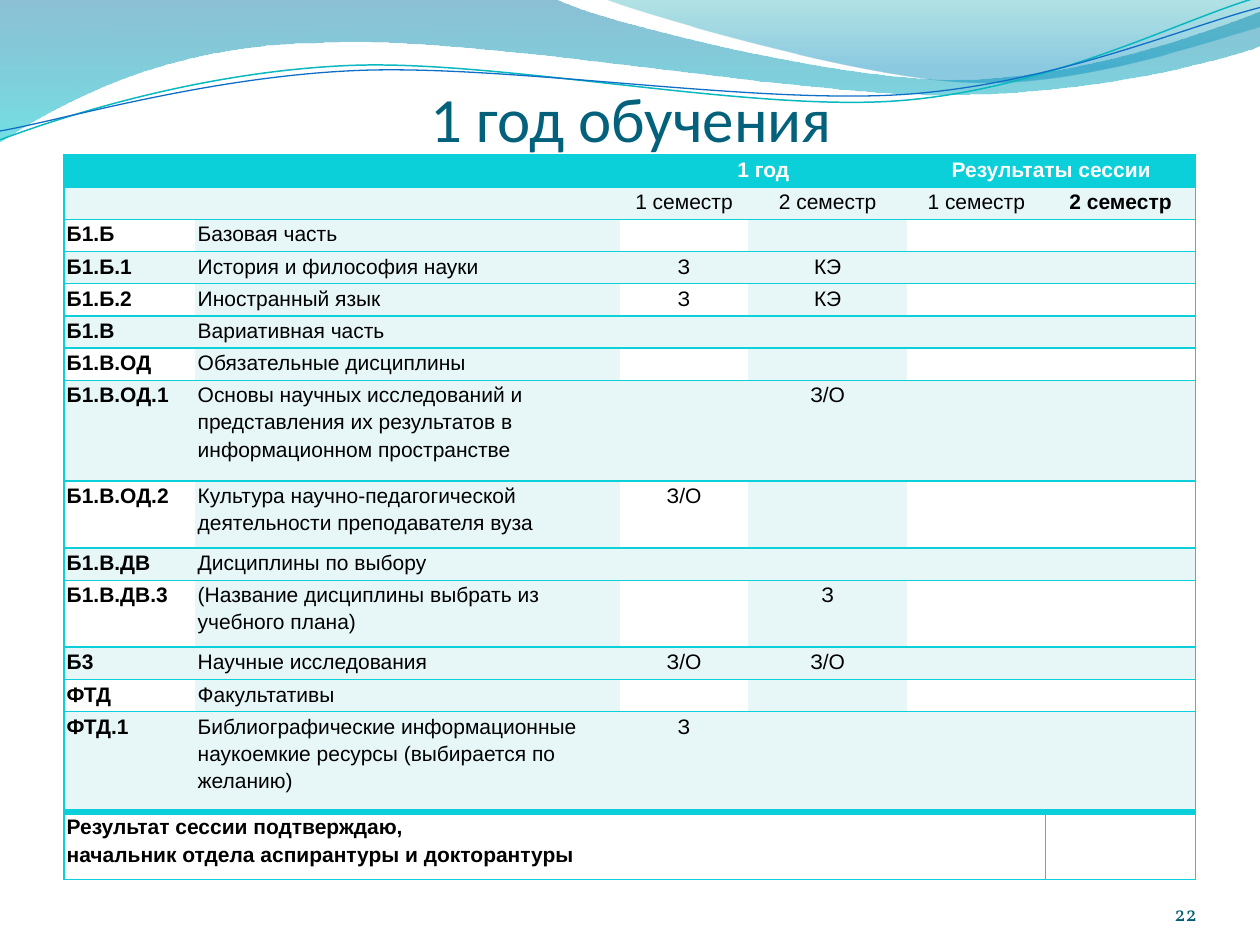
from math import cos, radians, sin

from lxml.etree import SubElement
from pptx import Presentation
from pptx.dml.color import RGBColor
from pptx.enum.text import MSO_ANCHOR, MSO_AUTO_SIZE, PP_ALIGN
from pptx.oxml.ns import qn
from pptx.util import Inches, Pt

COLORS = {
    "title": "04617B", "number": "045D75", "accent": "0BD0D9", "band": "E7F7F8",
    "white": "FFFFFF", "black": "000000", "wave_top": "0074A1", "wave_bottom": "00C6CF",
    "crest_top": "00A1A9", "crest_bottom": "008BBF", "teal_line": "0AB8BF", "blue_line": "0F6FC6",
}
NO_STYLE = "{2D5ABB26-0587-4C30-8999-92F81FD0307C}"
COLUMN_WIDTHS = [1.04, 3.37, 1.02, 1.26, 1.1, 1.19]
ROW_UNITS = [1] * 7 + [3.13, 2.08, 1, 2.08, 1, 1, 3.13, 2.08]
LINE_TILT = 2.7  # degrees, counterclockwise

# Each row: code, subject, then marks for the two semesters
SUBJECTS = [
    ("Б1.Б", "Базовая часть", "", ""),
    ("Б1.Б.1", "История и философия науки", "З", "КЭ"),
    ("Б1.Б.2", "Иностранный язык", "З", "КЭ"),
    ("Б1.В", "Вариативная часть", "", ""),
    ("Б1.В.ОД", "Обязательные дисциплины", "", ""),
    ("Б1.В.ОД.1", "Основы научных исследований и представления их результатов "
                  "в информационном пространстве", "", "З/О"),
    ("Б1.В.ОД.2", "Культура научно-педагогической деятельности преподавателя вуза", "З/О", ""),
    ("Б1.В.ДВ", "Дисциплины по выбору", "", ""),
    ("Б1.В.ДВ.3", "(Название дисциплины выбрать из учебного плана)", "", "З"),
    ("Б3", "Научные исследования", "З/О", "З/О"),
    ("ФТД", "Факультативы", "", ""),
    ("ФТД.1", "Библиографические информационные наукоемкие ресурсы "
              "(выбирается по желанию)", "З", ""),
]
TABLE_ROWS = [
    ("", "", "1 год", "", "Результаты сессии", ""),
    ("", "", "1 семестр", "2 семестр", "1 семестр", "2 семестр"),
    *[subject + ("", "") for subject in SUBJECTS],
    ("Результат сессии подтверждаю,\nначальник отдела аспирантуры и докторантуры",) + ("",) * 5,
]

# Outlines: each part is one point for a corner, three for a Bezier curve
WAVE = [
    [(0, -0.01)], [(4.4, -0.01)],
    [(4.76, 0.17), (6.64, 0.63), (7.58, 0.63)], [(8.53, 0.63), (9.58, 0.26), (10, 0.09)],
    [(10.01, 0.36)],
    [(9.83, 0.44), (8.7, 0.76), (7.46, 0.75)], [(6.22, 0.75), (3.82, 0.28), (2.57, 0.34)],
    [(1.29, 0.35), (0.46, 0.83), (-0.01, 1.13)],
]
CREST = [
    [(4.79, -0.01)], [(5.09, 0.11), (6.82, 0.62), (7.69, 0.65)],
    [(8.56, 0.69), (9.61, 0.32), (10, 0.21)], [(10, 0)],
]
TEAL_LINE = [
    [(0, 1.11)], [(0.48, 0.93), (1.58, 0.57), (2.77, 0.52)],
    [(3.95, 0.47), (5.93, 0.89), (7.13, 0.8)], [(8.33, 0.71), (9.38, 0.15), (9.98, -0.02)],
]
BLUE_LINE = [
    [(0, 1.04)], [(0.47, 0.96), (1.64, 0.61), (2.83, 0.56)],
    [(4.03, 0.51), (5.97, 0.83), (7.17, 0.75)], [(8.36, 0.67), (9.41, 0.21), (10, 0.06)],
]


def color(name):
    return RGBColor.from_string(COLORS[name])


def apply_format(target, values):
    for name, value in values.items():
        setattr(target, name, value)


def place(shape, box):
    apply_format(shape, dict(zip(("left", "top", "width", "height"), map(Inches, box))))


def write(paragraph, text, font_color, **values):
    run = paragraph.add_run()
    run.text = text
    apply_format(run.font, values)
    run.font.color.rgb = color(font_color)


def turn(outline, angle, center):
    """Turn an outline clockwise about a center."""
    c, s = cos(radians(angle)), sin(radians(angle))
    return [[(center[0] + (x - center[0]) * c - (y - center[1]) * s,
              center[1] + (x - center[0]) * s + (y - center[1]) * c) for x, y in part]
            for part in outline]


def add_outline(slide, outline, close):
    """Build a freeform through the end points, then bend its segments."""
    outline = [[(Inches(x), Inches(y)) for x, y in part] for part in outline]
    corners = [part[-1] for part in outline]
    builder = slide.shapes.build_freeform(*corners[0], scale=1.0)
    builder.add_line_segments(corners[1:], close=close)
    shape = builder.convert_to_shape()
    shape.shadow.inherit = False
    segments = list(shape.element.iter(qn("a:lnTo")))
    for segment, part in zip(segments, outline[1:]):
        if len(part) == 3:
            curve = SubElement(segment.getparent(), qn("a:cubicBezTo"))
            for x, y in part:
                SubElement(curve, qn("a:pt"), x=str(x - shape.left), y=str(y - shape.top))
            segment.getparent().replace(segment, curve)
    return shape


def add_gradient_wave(slide, outline, stops):
    shape = add_outline(slide, outline, True)
    shape.line.fill.background()
    shape.fill.gradient()
    shape.fill.gradient_angle = 270
    for stop, (position, name, _) in zip(shape.fill.gradient_stops, stops):
        stop.position = position
        stop.color.rgb = color(name)
    gradient = shape.element.spPr.find(qn("a:gradFill"))
    for element, (_, _, opacity) in zip(gradient.iter(qn("a:srgbClr")), stops):
        SubElement(element, qn("a:alpha"), val=str(opacity * 1000))


def add_header_waves(slide):
    add_gradient_wave(slide, WAVE, [(0, "wave_top", 45), (1, "wave_bottom", 55)])
    add_gradient_wave(slide, CREST, [(0, "crest_top", 30), (0.8, "crest_bottom", 45)])
    for outline, name, width, center in ((TEAL_LINE, "teal_line", 0.85, (4.99, 0.58)),
                                         (BLUE_LINE, "blue_line", 0.75, (5, 0.59))):
        shape = add_outline(slide, turn(outline, LINE_TILT, center), False)
        shape.rotation = 360 - LINE_TILT
        shape.fill.background()
        shape.line.color.rgb = color(name)
        shape.line.width = Pt(width)


def add_title(slide, box):
    title = slide.shapes.title
    place(title, box)
    apply_format(title.text_frame, {
        "vertical_anchor": MSO_ANCHOR.BOTTOM, "auto_size": MSO_AUTO_SIZE.NONE, "word_wrap": True,
        "margin_left": 0, "margin_right": 0, "margin_top": Inches(0.05), "margin_bottom": 0})
    paragraph = title.text_frame.paragraphs[0]
    paragraph.alignment = PP_ALIGN.CENTER
    write(paragraph, "1 год обучения", "title", name="Calibri", size=Pt(36))
    title.element.getparent().append(title.element)  # in front of the waves


def add_borders(cell, widths):
    properties = cell._tc.get_or_add_tcPr()
    for side in "LRTB":
        width = widths.get(side, 0)
        line = SubElement(properties, qn("a:ln" + side), w=str(Pt(width)))
        if width:
            fill = SubElement(line, qn("a:solidFill"))
            SubElement(fill, qn("a:srgbClr"), val=COLORS["accent"])
        else:
            SubElement(line, qn("a:noFill"))


def fill_name(row, column):
    if row == 0:
        return "accent"
    if row == len(TABLE_ROWS) - 1:
        return "white"
    return "band" if row % 2 or column in (1, 3) else "white"


def format_cell(cell, row, column, text):
    last_row, last_column = len(TABLE_ROWS) - 1, len(COLUMN_WIDTHS) - 1
    widths = {"T": 4 if row == last_row else 1, "B": 4 if row == last_row - 1 else 1}
    if column == 0 or (row, column) == (last_row, last_column):
        widths["L"] = 1
    if column == last_column:
        widths["R"] = 1
    add_borders(cell, widths)
    cell.fill.solid()
    cell.fill.fore_color.rgb = color(fill_name(row, column))
    side = Inches(0.02 if column < 2 else 0.07)
    apply_format(cell, {"margin_left": side, "margin_right": side,
                        "margin_top": 0, "margin_bottom": 0})
    bold = row == 0 or column == 0 or (row, column) == (1, last_column)
    for index, line in enumerate(text.split("\n")):
        frame = cell.text_frame
        paragraph = frame.add_paragraph() if index else frame.paragraphs[0]
        if line:
            paragraph.line_spacing = 1.15
            paragraph.alignment = PP_ALIGN.LEFT if column < 2 else PP_ALIGN.CENTER
            write(paragraph, line, "black" if row else "white",
                  name="Arial", size=Pt(12), bold=bold)
        else:
            SubElement(paragraph._p, qn("a:endParaRPr"), sz="1200")


def add_study_table(slide, box):
    table = slide.shapes.add_table(len(TABLE_ROWS), len(COLUMN_WIDTHS), *map(Inches, box)).table
    apply_format(table, {"first_row": False, "horz_banding": False})
    table._tbl.tblPr.find(qn("a:tableStyleId")).text = NO_STYLE
    for column, width in zip(table.columns, COLUMN_WIDTHS):
        column.width = Inches(box[2] * width / sum(COLUMN_WIDTHS))
    for row, units in zip(table.rows, ROW_UNITS):
        row.height = Inches(box[3] * units / sum(ROW_UNITS))
    for row, texts in enumerate(TABLE_ROWS):
        for column, text in enumerate(texts):
            format_cell(table.cell(row, column), row, column, text)
    last = len(TABLE_ROWS) - 1
    for row, first, end in ((0, 2, 3), (0, 4, 5), (last, 0, 3)):
        table.cell(row, first).merge(table.cell(row, end))


def add_page_number(slide, box):
    frame = slide.shapes.add_textbox(*map(Inches, box)).text_frame
    apply_format(frame, {"word_wrap": True, "vertical_anchor": MSO_ANCHOR.BOTTOM, "margin_left": 0,
                         "margin_right": 0, "margin_top": 0, "margin_bottom": 0})
    frame.paragraphs[0].alignment = PP_ALIGN.RIGHT
    write(frame.paragraphs[0], "22", "number", name="Vollkorn", size=Pt(12))


def main():
    presentation = Presentation()
    apply_format(presentation, {"slide_width": Inches(10), "slide_height": Inches(7.5)})
    slide = presentation.slides.add_slide(presentation.slide_layouts[5])
    add_header_waves(slide)
    add_title(slide, (0.51, 0.44, 9, 0.79))
    add_study_table(slide, (0.51, 1.23, 8.98, 5.75))
    add_page_number(slide, (8.67, 6.95, 0.83, 0.4))
    presentation.save("out.pptx")


if __name__ == "__main__":
    main()
